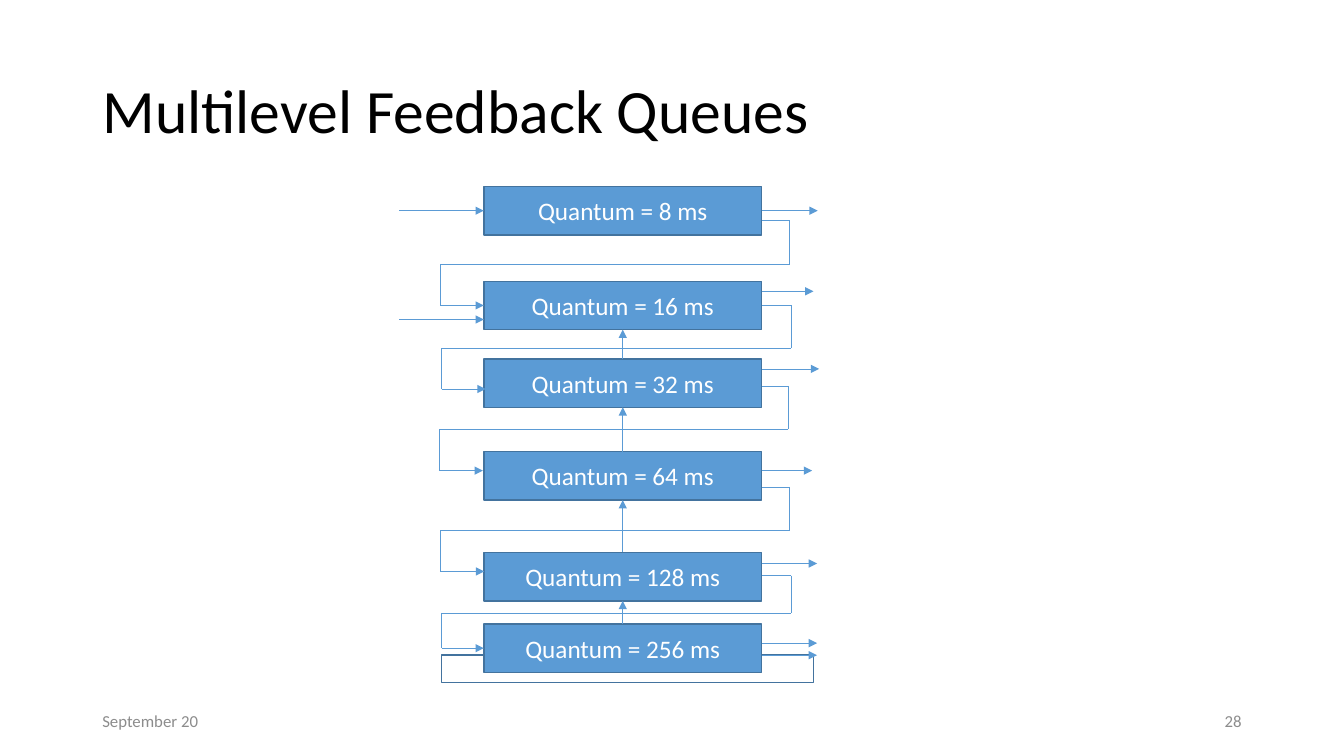
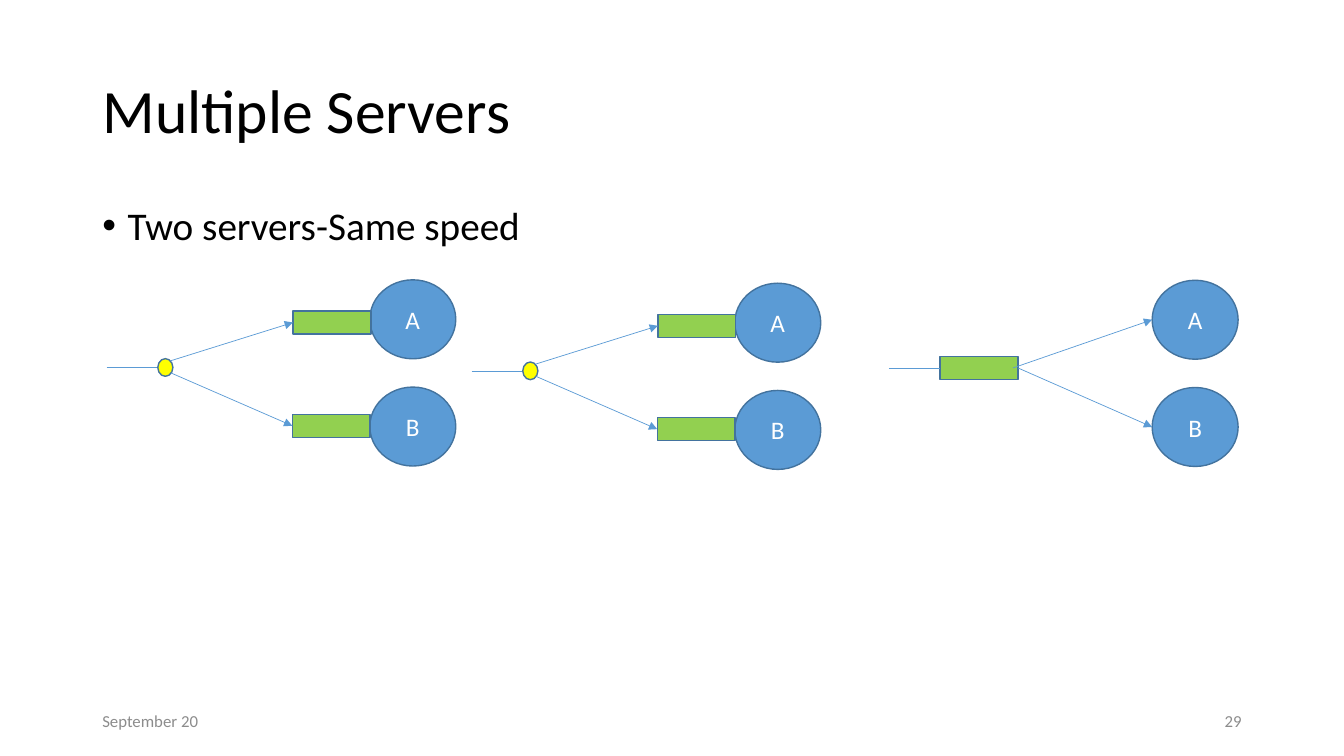
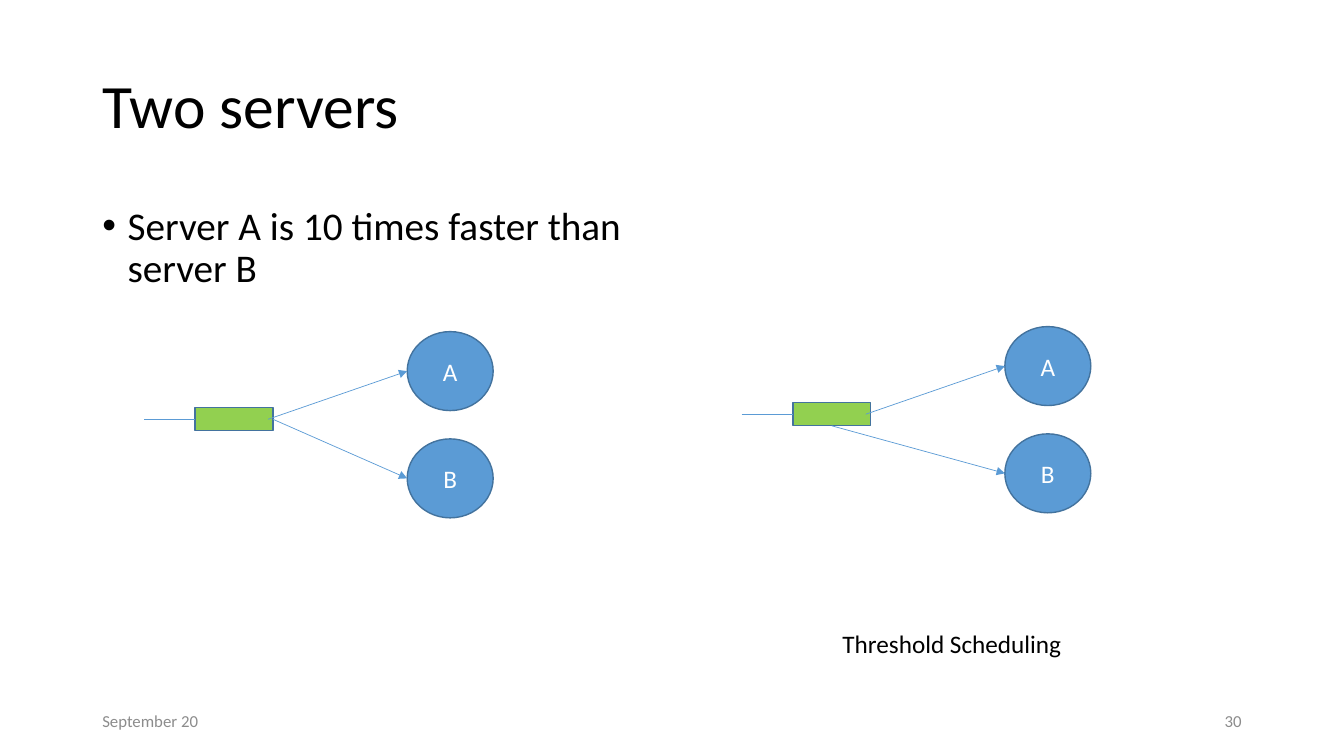
from itertools import pairwise

from lxml.etree import SubElement
from pptx import Presentation
from pptx.dml.color import RGBColor
from pptx.enum.shapes import MSO_CONNECTOR, MSO_SHAPE
from pptx.enum.text import MSO_ANCHOR, MSO_AUTO_SIZE, PP_ALIGN
from pptx.oxml.ns import qn
from pptx.util import Pt

FONT = "Calibri"
BLACK = RGBColor(0x00, 0x00, 0x00)
WHITE = RGBColor(0xFF, 0xFF, 0xFF)
GREY = RGBColor(0x8C, 0x8C, 0x8C)
BLUE = RGBColor(0x5B, 0x9B, 0xD5)
DARK_BLUE = RGBColor(0x43, 0x73, 0x9E)
GREEN = RGBColor(0x92, 0xD0, 0x50)
YELLOW = RGBColor(0xFF, 0xFF, 0x00)

TITLE_ONLY, TITLE_AND_BODY = 5, 1
TOP, LEFT, BOTTOM, RIGHT = range(4)
MARGIN, CONTENT_W = 66, 828
DATE = "September 20"

# Queue levels: quantum in ms, top of the box, height of the exit arrow, length of that arrow
LEVELS = [
    (8, 133.2, 150.5, 40),
    (16, 200.9, 208.1, 37),
    (32, 256.3, 263.5, 41),
    (64, 322.6, 336.2, 36),
    (128, 394.6, 402.5, 39.5),
    (256, 445.7, 459.4, 39.5),
]
# Feedback to the next level: right edge, then heights of leaving, turning back, entering
FEEDBACK = [
    (564, 157.7, 188.6, 218.2),
    (565, 218.2, 248.8, 277.9),
    (563, 275.8, 306.7, 336.2),
    (564, 347.8, 378.7, 408.2),
    (565, 411.1, 437.8, 463),
]
ARRIVALS = [(0, 150.5), (1, 228.2)]
QUEUE_X, QUEUE_W, QUEUE_H = 345.6, 198.5, 34.6
QUEUE_END = QUEUE_X + QUEUE_W

# Server diagrams: all offsets are measured from the corner of server A
SERVER_W, SERVER_H, SERVER_STEP = 61.4, 56.4, 76.6
BUFFER_W, BUFFER_H = 55.6, 16.5
INLET_X, JOIN_X, JOIN_Y = -188, -151.5, 62.6
DOT_W, DOT_H = 10.8, 12.6
SPLIT_AT = [(264.2, 199.9), (524.9, 202.3)]
SHARED_AT = (823, 200.2)
FASTER_AT = (290.9, 236.9)
THRESHOLD_AT = (717.8, 233.3)


def style(frame, size, color, align=PP_ALIGN.LEFT):
    for para in frame.paragraphs:
        para.alignment = align
        for span in para.runs:
            span.font.name = FONT
            span.font.size = Pt(size)
            span.font.color.rgb = color


def add_text(page, area, text, size, color, align=PP_ALIGN.LEFT, wrap=True):
    box = page.shapes.add_textbox(*map(Pt, area))
    frame = box.text_frame
    frame.text = text
    frame.word_wrap = wrap
    frame.vertical_anchor = MSO_ANCHOR.MIDDLE
    style(frame, size, color, align)


def fill_placeholder(holder, area, text, size):
    holder.left, holder.top, holder.width, holder.height = map(Pt, area)
    frame = holder.text_frame
    frame.text = text
    frame.auto_size = MSO_AUTO_SIZE.NONE
    frame.paragraphs[0].line_spacing = 0.9
    style(frame, size, BLACK)
    return frame


def add_page(deck, number, title, body=None, body_w=0, title_y=28.8):
    """Add a slide with its title, optional bullet, date and number."""
    layout = TITLE_AND_BODY if body else TITLE_ONLY
    page = deck.slides.add_slide(deck.slide_layouts[layout])
    frame = fill_placeholder(page.shapes.title, (MARGIN, title_y, CONTENT_W, 104.4), title, 44)
    frame.vertical_anchor = MSO_ANCHOR.MIDDLE
    if body:
        frame = fill_placeholder(page.placeholders[1], (MARGIN, 144, body_w, 342.7), body, 28)
        para = frame.paragraphs[0]
        para.space_before = Pt(10)
        props = para._p.get_or_add_pPr()
        props.set("marL", str(Pt(18)))
        props.set("indent", str(Pt(-18)))
    foot_w = 216
    add_text(page, (MARGIN, 500.5, foot_w, 28.8), DATE, 12, GREY)
    add_text(page, (MARGIN + CONTENT_W - foot_w, 500.5, foot_w, 28.8), str(number), 12, GREY,
             PP_ALIGN.RIGHT)
    return page


def add_box(page, kind, area, fill, text=""):
    box = page.shapes.add_shape(kind, *map(Pt, area))
    box.shadow.inherit = False
    box.fill.solid()
    box.fill.fore_color.rgb = fill
    box.line.color.rgb = DARK_BLUE
    box.line.width = Pt(1)
    if text:
        box.text_frame.text = text
        box.text_frame.vertical_anchor = MSO_ANCHOR.MIDDLE
        style(box.text_frame, 18, WHITE, PP_ALIGN.CENTER)
    return box


def add_link(page, start, end, arrow=True, begin=None, finish=None):
    """Draw a line between points; begin and finish are (box, side) joints."""
    link = page.shapes.add_connector(MSO_CONNECTOR.STRAIGHT, *map(Pt, (*start, *end)))
    link.line.color.rgb = BLUE
    link.line.width = Pt(0.5)
    if begin:
        link.begin_connect(*begin)
    if finish:
        link.end_connect(*finish)
    props = link._element.spPr
    if arrow:
        SubElement(props.find(qn("a:ln")), qn("a:tailEnd"), type="triangle")
    SubElement(props, qn("a:effectLst"))


def joint(box, side, y):
    """Give the joint on a left or right side if y is its middle."""
    middle = box.top + box.height / 2
    return (box, side) if abs(middle - Pt(y)) < Pt(0.5) else None


def draw_feedback_queues(page):
    add_box(page, MSO_SHAPE.RECTANGLE, (315.4, 468, 265.7, 19.4), WHITE)
    queues = [add_box(page, MSO_SHAPE.RECTANGLE, (QUEUE_X, top, QUEUE_W, QUEUE_H), BLUE,
                      f"Quantum = {quantum} ms")
              for quantum, top, _, _ in LEVELS]
    for queue, (_, _, y, length) in zip(queues, LEVELS):
        add_link(page, (QUEUE_END, y), (QUEUE_END + length, y), begin=joint(queue, RIGHT, y))
    add_link(page, (QUEUE_END, 468), (QUEUE_END + 39.5, 468))
    for level, y in ARRIVALS:
        add_link(page, (285.1, y), (QUEUE_X, y), finish=joint(queues[level], LEFT, y))

    for (upper, lower), (right, leave, turn, enter) in zip(pairwise(queues), FEEDBACK):
        left = right - 249.5
        points = [(QUEUE_END, leave), (right, leave), (right, turn),
                  (left, turn), (left, enter), (left + 31.4, enter)]
        last = len(points) - 2
        for step, (start, end) in enumerate(pairwise(points)):
            add_link(page, start, end, arrow=step == last,
                     begin=joint(upper, RIGHT, leave) if step == 0 else None,
                     finish=joint(lower, LEFT, enter) if step == last else None)

    for upper, lower in list(pairwise(queues))[1:]:
        add_link(page, (0, 0), (0, 0), begin=(lower, TOP), finish=(upper, BOTTOM))


def add_servers(page, x, y):
    for row, name in enumerate("AB"):
        add_box(page, MSO_SHAPE.OVAL, (x, y + row * SERVER_STEP, SERVER_W, SERVER_H), BLUE, name)


def add_buffer(page, x, y):
    return add_box(page, MSO_SHAPE.RECTANGLE, (x, y, BUFFER_W, BUFFER_H), GREEN)


def draw_split_queues(page, x, y):
    """One arrival line that divides over a queue for each server."""
    add_servers(page, x, y)
    join = (x + JOIN_X, y + JOIN_Y)
    add_link(page, (x + INLET_X, y + JOIN_Y), join, arrow=False)
    add_box(page, MSO_SHAPE.OVAL, (join[0], join[1] - DOT_H / 2, DOT_W, DOT_H), YELLOW)
    for dx, dy, start_dy in [(-54.9, 22.2, -4.8), (-55.4, 96, 3.8)]:
        buffer = add_buffer(page, x + dx, y + dy)
        add_link(page, (join[0] + 9.2, join[1] + start_dy),
                 (x + dx, y + dy + BUFFER_H / 2), finish=(buffer, LEFT))


def draw_shared_queue(page, x, y, slow_side=RIGHT):
    """One queue for both servers; B is fed from the given side of it."""
    add_servers(page, x, y)
    join = (x + JOIN_X, y + JOIN_Y)
    buffer = add_buffer(page, join[0], join[1] - BUFFER_H / 2)
    add_link(page, (x + INLET_X, join[1]), join, arrow=False, finish=(buffer, LEFT))
    server_y = y + SERVER_H / 2
    add_link(page, (x - 99.4, join[1]), (x, server_y))
    add_link(page, join, (x, server_y + SERVER_STEP), begin=(buffer, slow_side))


def main():
    deck = Presentation()
    deck.slide_width, deck.slide_height = Pt(960), Pt(540)

    draw_feedback_queues(add_page(deck, 28, "Multilevel Feedback Queues"))

    page = add_page(deck, 29, "Multiple Servers", "Two servers-Same speed", 395.3)
    for corner in SPLIT_AT:
        draw_split_queues(page, *corner)
    draw_shared_queue(page, *SHARED_AT)

    page = add_page(deck, 30, "Two servers", "Server A is 10 times faster than server B", 447.8,
                    title_y=25.2)
    draw_shared_queue(page, *FASTER_AT)
    draw_shared_queue(page, *THRESHOLD_AT, slow_side=BOTTOM)
    add_text(page, (594.7, 445, 172.8, 28.8), "Threshold Scheduling", 18, BLACK, wrap=False)

    deck.save("out.pptx")


if __name__ == "__main__":
    main()
